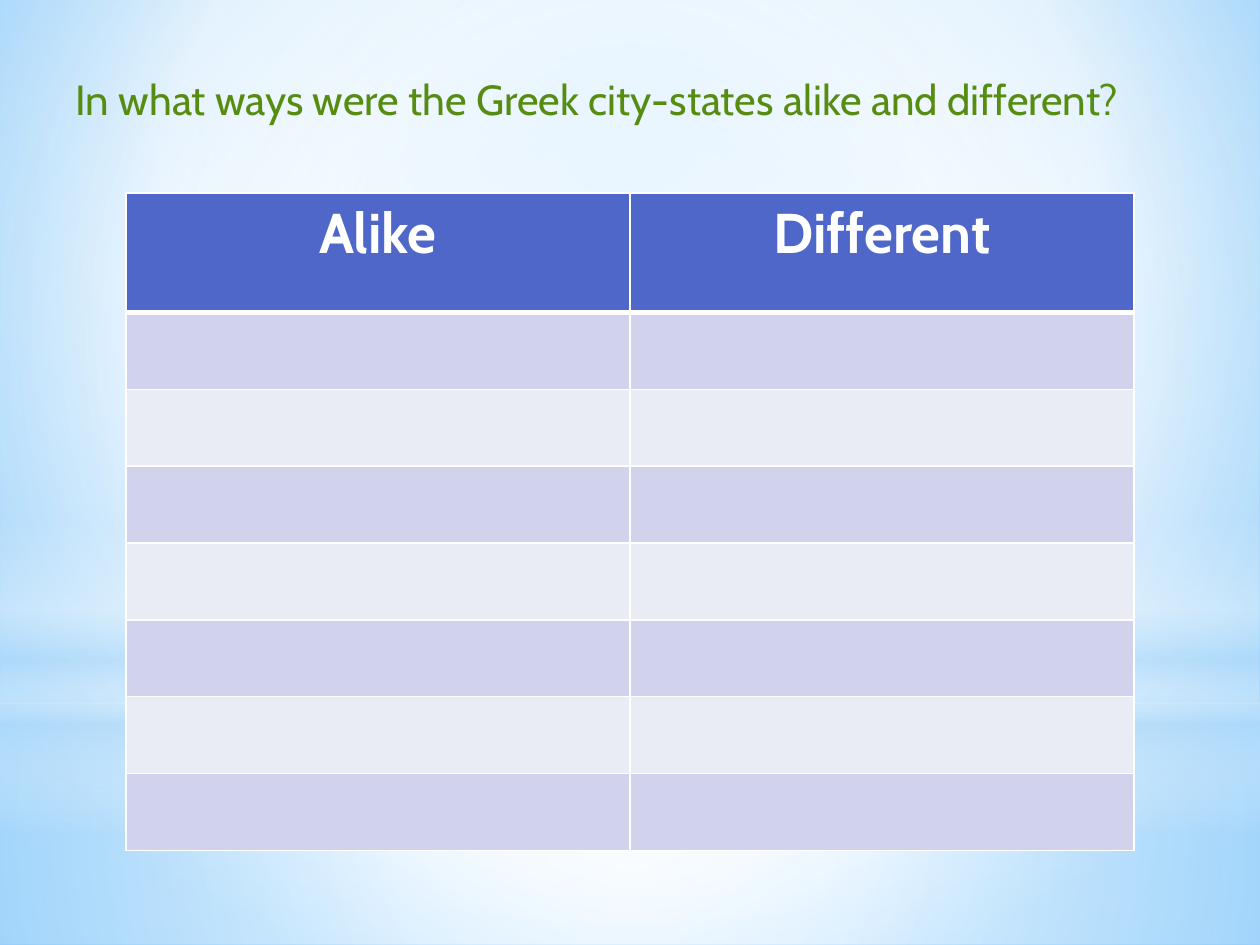
from lxml import etree
from pptx import Presentation
from pptx.dml.color import RGBColor
from pptx.enum.shapes import MSO_SHAPE
from pptx.enum.text import MSO_ANCHOR, MSO_AUTO_SIZE, PP_ALIGN
from pptx.oxml.ns import qn
from pptx.util import Inches, Pt

RECT, OVAL = MSO_SHAPE.RECTANGLE, MSO_SHAPE.OVAL
LEFT, CENTER = PP_ALIGN.LEFT, PP_ALIGN.CENTER
TOP = MSO_ANCHOR.TOP
NO_FIT = MSO_AUTO_SIZE.NONE

WHITE = RGBColor(0xFF, 0xFF, 0xFF)
GREEN = RGBColor(0x56, 0x8D, 0x11)
BLUE = RGBColor(0x4E, 0x67, 0xC8)
BANDS = RGBColor(0xE9, 0xEB, 0xF5), RGBColor(0xD0, 0xD3, 0xEB)
SKY = RGBColor(0x9E, 0xD5, 0xFF)
DEEP = RGBColor(0x5B, 0xB9, 0xFF)
PALE = RGBColor(0xB4, 0xDC, 0xFA)
MIDDLE = 50, 50, 50, 50


def node(parent, tag, **attrs):
    return etree.SubElement(parent, qn(tag), {k: str(v) for k, v in attrs.items()})


def paint(parent, color, alpha=100):
    clr = node(parent, "a:srgbClr", val=color)
    if alpha < 100:
        node(clr, "a:alpha", val=alpha * 1000)


def blend(fill, holder, stops, focus=None):
    """Fill with stops of (place, colour, opacity): round a focus, or downwards."""
    fill.solid()
    grad = etree.Element(qn("a:gradFill"), rotWithShape="1")
    group = node(grad, "a:gsLst")
    for place, *color in stops:
        paint(node(group, "a:gs", pos=place * 1000), *color)
    if focus:
        way = node(grad, "a:path", path="circle")
        node(way, "a:fillToRect", **dict(zip("ltrb", (n * 1000 for n in focus))))
    else:
        node(grad, "a:lin", ang=90 * 60000, scaled=0)
    old = holder.find(qn("a:solidFill"))
    old.getparent().replace(old, grad)


def write(frame, text, size=24, color=GREEN, bold=False, align=LEFT, font="Cabin"):
    par = frame.paragraphs[0]
    par.alignment = align
    run = par.add_run()
    run.text = text
    run.font.name, run.font.size, run.font.bold = font, Pt(size), bold
    run.font.color.rgb = color


def edge(cell, **widths):
    """Draw white borders; widths in points are keyed by side L, R, T, B."""
    props = cell._tc.get_or_add_tcPr()
    for spot, (side, width) in enumerate(widths.items()):
        line = node(props, f"a:ln{side}", w=Pt(width))
        paint(node(line, "a:solidFill"), WHITE)
        props.insert(spot, line)


class Page:
    def __init__(self, deck):
        self.slide = deck.slides.add_slide(deck.slide_layouts[5])

    def ground(self, stops, focus):
        fill = self.slide.background.fill
        fill.solid()
        blend(fill, self.slide.element.find(".//" + qn("p:bgPr")), stops, focus)

    def glow(self, kind, top, height, stops, focus=None):
        shape = self.slide.shapes.add_shape(
            kind, 0, Inches(top), Inches(10), Inches(height))
        shape.shadow.inherit = False
        shape.line.fill.background()
        blend(shape.fill, shape.element.spPr, stops, focus)

    def title(self, text, left, top, width, height):
        shape = self.slide.shapes.title
        shape.left, shape.top = Inches(left), Inches(top)
        shape.width, shape.height = Inches(width), Inches(height)
        frame = shape.text_frame
        frame.auto_size, frame.word_wrap = NO_FIT, False
        frame.vertical_anchor = TOP
        write(frame, text)
        # bring the title in front of the glows
        shape.element.getparent().append(shape.element)

    def table(self, heads, left, top, width, heights):
        grid = self.slide.shapes.add_table(
            len(heights), len(heads), Inches(left), Inches(top),
            Inches(width), Inches(sum(heights))).table
        for r, height in enumerate(heights):
            grid.rows[r].height = Inches(height)
            for c, head in enumerate(heads):
                cell = grid.cell(r, c)
                cell.fill.solid()
                cell.fill.fore_color.rgb = BANDS[r % 2] if r else BLUE
                edge(cell, L=1, R=1, T=3 if r == 1 else 1, B=1 if r else 3)
                if r == 0:
                    write(cell.text_frame, head, size=32, color=WHITE,
                          bold=True, align=CENTER)


def main():
    deck = Presentation()
    deck.slide_width, deck.slide_height = Inches(10), Inches(7.5)
    page = Page(deck)
    page.ground([(0, SKY), (60, WHITE), (100, DEEP)], (20, 10, 20, 60))
    page.glow(RECT, 5.58, 1.92,
              [(0, WHITE, 91), (37, WHITE, 76), (100, PALE, 79)], MIDDLE)
    page.glow(RECT, 0, 5.58,
              [(0, WHITE, 89), (48, WHITE, 62), (100, PALE, 79)], MIDDLE)
    page.glow(RECT, 4.12, 2.5,
              [(0, WHITE, 0), (29, WHITE, 30), (45, PALE, 40),
               (55, WHITE, 26), (65, PALE, 60), (100, WHITE, 0)])
    page.glow(OVAL, 1.75, 5.58, [(0, WHITE), (56, WHITE, 0)], MIDDLE)
    page.title("In what ways were the Greek city-states alike and different?",
               0.5, 0.53, 9.36, 0.5)
    page.table(["Alike", "Different"], 1, 1.53, 8, [0.95] + [0.61] * 7)
    deck.save("out.pptx")


if __name__ == "__main__":
    main()
